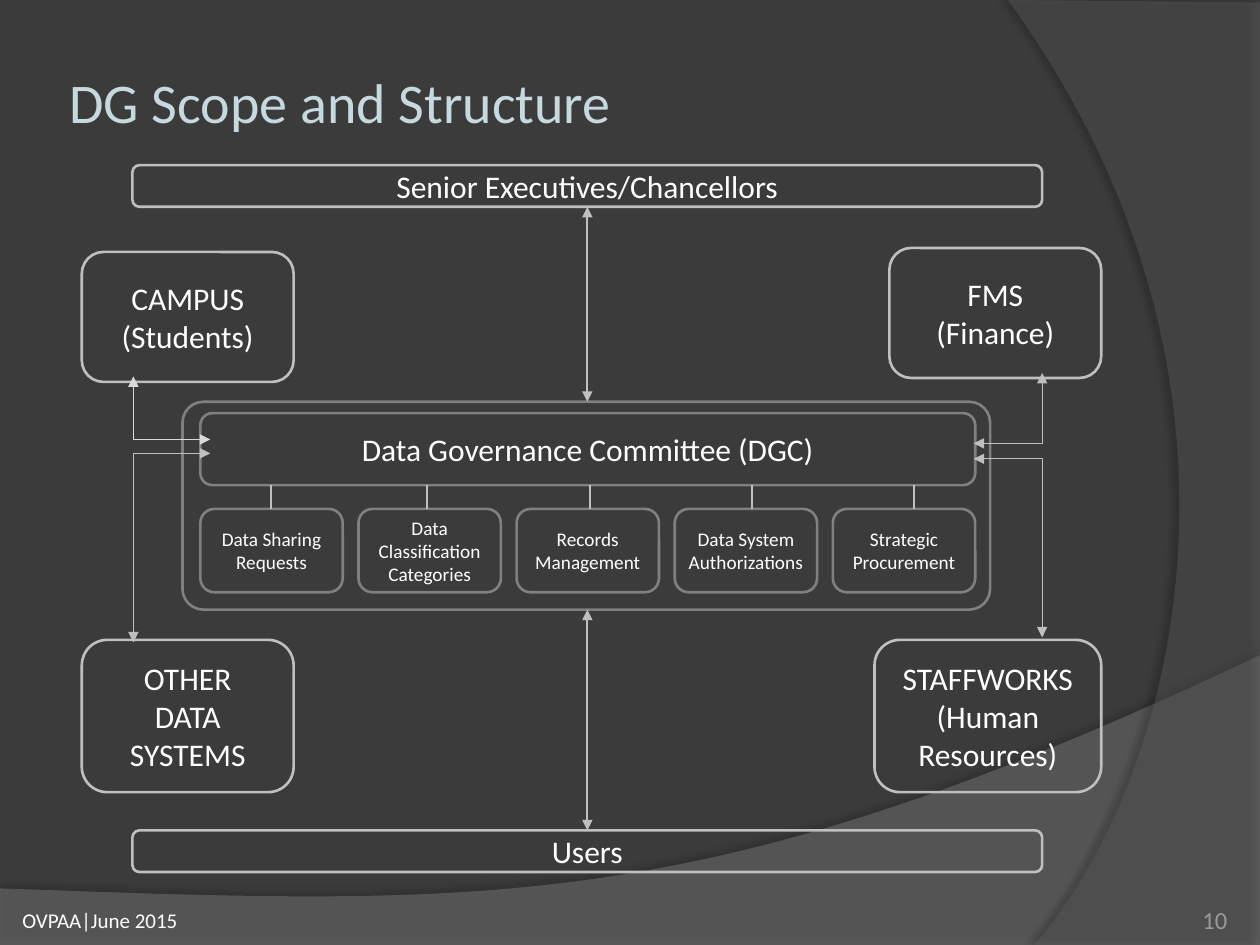
from dataclasses import dataclass

from lxml.etree import SubElement
from pptx import Presentation
from pptx.dml.color import RGBColor
from pptx.enum.shapes import MSO_CONNECTOR as Connector, MSO_SHAPE as Shape
from pptx.enum.text import MSO_ANCHOR as Anchor, PP_ALIGN as Align
from pptx.oxml.ns import qn
from pptx.util import Cm, Pt


@dataclass(frozen=True)
class Theme:
    font: str = "Calibri"
    background: str = "3B3B3B"
    wave: str = "7F7F7F"
    arc: str = "5E5E5E"
    title: str = "C5D9DF"
    text: str = "FFFFFF"
    muted: str = "9B9A98"
    outline: str = "BFBFBF"
    inner_outline: str = "808080"
    bright_outline: str = "D9D9D9"
    title_size: float = 32
    body_size: float = 18
    number_size: float = 14
    footer_size: float = 12
    small_size: float = 11
    box_line: float = 1.5
    arrow_line: float = 1
    elbow_line: float = 0.75


THEME = Theme()


def color(value):
    return RGBColor.from_string(value)


def write_text(shape, text, size=THEME.body_size, fill=THEME.text,
               align=Align.CENTER, anchor=Anchor.MIDDLE, insets=None):
    """Write one paragraph per line; insets are (horizontal, vertical) in cm."""
    frame = shape.text_frame
    frame.word_wrap = True
    frame.vertical_anchor = anchor
    if insets:
        frame.margin_left = frame.margin_right = Cm(insets[0])
        frame.margin_top = frame.margin_bottom = Cm(insets[1])
    frame.text = text
    for paragraph in frame.paragraphs:
        paragraph.alignment = align
        font = paragraph.runs[0].font
        font.name, font.size = THEME.font, Pt(size)
        font.color.rgb = color(fill)


def add_text(slide, box, text, **text_format):
    shape = slide.shapes.add_textbox(*map(Cm, box))
    write_text(shape, text, **text_format)


def add_box(slide, box, text="", outline=THEME.outline, rounding=None, **text_format):
    shape = slide.shapes.add_shape(Shape.ROUNDED_RECTANGLE, *map(Cm, box))
    shape.shadow.inherit = False
    shape.fill.background()
    shape.line.color.rgb = color(outline)
    shape.line.width = Pt(THEME.box_line)
    if rounding:
        shape.adjustments[0] = rounding
    if text:
        write_text(shape, text, **text_format)


def add_line(slide, start, end, width=THEME.arrow_line, outline=THEME.outline,
             arrows=True, elbow=False):
    """Draw a line; an elbow runs across from start, then up or down to end."""
    kind = Connector.ELBOW if elbow else Connector.STRAIGHT
    connector = slide.shapes.add_connector(kind, *map(Cm, (*start, *end)))
    connector.line.color.rgb = color(outline)
    connector.line.width = Pt(width)
    properties = connector.element.spPr
    if elbow:
        properties.find(qn("a:prstGeom")).set("prst", "bentConnector2")
    if arrows:
        for tag in ("a:headEnd", "a:tailEnd"):
            SubElement(properties.find(qn("a:ln")), qn(tag), type="triangle")
    SubElement(properties, qn("a:effectLst"))


def curve_points(start, control_1, control_2, end, steps=48):
    """Points along a cubic curve."""
    points = []
    for step in range(steps + 1):
        t = step / steps
        weights = ((1 - t) ** 3, 3 * t * (1 - t) ** 2, 3 * t * t * (1 - t), t ** 3)
        points.append(tuple(
            sum(weight * value for weight, value in zip(weights, values))
            for values in zip(start, control_1, control_2, end)))
    return points


def add_backdrop_shape(slide, points, fill, alpha, shadow_alpha, distance, direction):
    points = [(Cm(x), Cm(y)) for x, y in points]
    builder = slide.shapes.build_freeform(*points[0])
    builder.add_line_segments(points[1:], close=True)
    shape = builder.convert_to_shape()
    shape.fill.solid()
    shape.fill.fore_color.rgb = color(fill)
    shape.line.fill.background()
    shape.shadow.inherit = False
    properties = shape.element.spPr
    fill_color = properties.find(qn("a:solidFill"))[0]
    SubElement(fill_color, qn("a:alpha"), val=str(alpha * 1000))
    shadow = SubElement(properties.find(qn("a:effectLst")), qn("a:outerShdw"),
                        blurRad=str(Pt(4)), dist=str(Pt(distance)),
                        dir=str(direction * 60000), rotWithShape="0")
    shadow_color = SubElement(shadow, qn("a:srgbClr"), val="000000")
    SubElement(shadow_color, qn("a:alpha"), val=str(shadow_alpha * 1000))


def add_backdrop(slide, box):
    left, top, width, height = box
    right, bottom = left + width, top + height
    slide.background.fill.solid()
    slide.background.fill.fore_color.rgb = color(THEME.background)
    wave = curve_points((right, top + 13.21), (left + 14.2, top + 18.52),
                        (left + 9.93, top + 18.26), (left, top + 17.91))
    add_backdrop_shape(slide, wave + [(left, bottom), (right, bottom)],
                       THEME.wave, 45, 35, 3.5, 270)
    arc = curve_points((left + 20.85, bottom), (left + 23.75, top + 15.72),
                       (left + 25.86, top + 7.62), (left + 20.32, top))
    add_backdrop_shape(slide, arc + [(right, top + 0.05), (right, bottom)],
                       THEME.arc, 40, 45, 4, 180)


def add_title(slide, box, text):
    title = slide.shapes.title
    title.left, title.top, title.width, title.height = map(Cm, box)
    write_text(title, text, size=THEME.title_size, fill=THEME.title,
               align=Align.LEFT, insets=(0.13, 0.13))


def add_footer(slide, box):
    left, top, width, height = box
    add_text(slide, (left, top + 0.22, 5.92, height - 0.22), "OVPAA|June 2015",
             size=THEME.footer_size, align=Align.LEFT)
    add_text(slide, (left + width - 2.11, top, 2.11, 1.02), "10",
             size=THEME.number_size, fill=THEME.muted, align=Align.RIGHT,
             anchor=Anchor.BOTTOM, insets=(0, 0))


def add_committee(slide, box):
    """The committee with its five working areas, inside one frame."""
    left, top, width, height = box
    margin, area_width, area_top = 0.36, 2.87, top + 2.16
    inner_left, inner_width = left + margin, 15.62
    committee_bottom = top + 1.68
    add_box(slide, (inner_left, top + 0.23, inner_width, 1.45),
            "Data Governance Committee (DGC)", outline=THEME.inner_outline)
    areas = (("Data Sharing Requests", 1.78), ("Data Classification Categories", 4.93),
             ("Records Management", 8.21), ("Data System Authorizations", 11.48),
             ("Strategic Procurement", 14.74))
    pitch = (inner_width - area_width) / (len(areas) - 1)
    for index, (label, stub) in enumerate(areas):
        add_box(slide, (inner_left + index * pitch, area_top, area_width, 1.68), label,
                outline=THEME.inner_outline, size=THEME.small_size, insets=(0, 0.13))
        add_line(slide, (left + stub, area_top), (left + stub, committee_bottom),
                 arrows=False)
    add_box(slide, box, outline=THEME.inner_outline, rounding=0.1)


def add_structure(slide, box):
    left, top, width, height = box
    bar_left, bar_width, bar_height = left + 1.02, 18.34, 0.84
    users_top = top + height - bar_height
    frame_top, frame_height = top + 4.77, 4.19

    # Bars for leadership and users
    for bar_top, label in ((top, "Senior Executives/Chancellors"), (users_top, "Users")):
        add_box(slide, (bar_left, bar_top, bar_width, bar_height), label)

    add_committee(slide, (left + 2.03, frame_top, 16.28, frame_height))

    # Source systems in the corners
    systems = (((0, 1.75, 4.27, 2.62), "CAMPUS\n(Students)"),
               ((16.28, 1.67, 4.27, 2.62), "FMS\n(Finance)"),
               ((0, 9.57, 4.27, 3.07), "OTHER\nDATA\nSYSTEMS"),
               ((15.98, 9.57, 4.57, 3.07), "STAFFWORKS\n(Human Resources)"))
    for (x, y, w, h), label in systems:
        add_box(slide, (left + x, top + y, w, h), label)

    # Links from the committee to each system
    elbows = (((2.59, 5.53), (1.04, 4.26), THEME.bright_outline),
              ((2.59, 5.81), (1.04, 9.62), THEME.outline),
              ((17.98, 5.61), (19.36, 4.19), THEME.outline),
              ((17.98, 5.92), (19.36, 9.52), THEME.outline))
    for (x1, y1), (x2, y2), outline in elbows:
        add_line(slide, (left + x1, top + y1), (left + x2, top + y2),
                 width=THEME.elbow_line, outline=outline, elbow=True)

    # Links from the committee to both bars
    center = bar_left + bar_width / 2
    add_line(slide, (center, top + bar_height), (center, frame_top))
    add_line(slide, (center, users_top), (center, frame_top + frame_height))


def main():
    presentation = Presentation()
    presentation.slide_width, presentation.slide_height = Cm(25.4), Cm(19.05)
    slide = presentation.slides.add_slide(presentation.slide_layouts[5])
    add_backdrop(slide, (0, 0, 25.4, 19.05))
    add_title(slide, (1.27, 0.76, 20.75, 2.57), "DG Scope and Structure")
    add_footer(slide, (0.2, 17.81, 24.54, 1.24))
    add_structure(slide, (1.65, 3.33, 20.55, 14.25))
    presentation.save("out.pptx")


if __name__ == "__main__":
    main()
